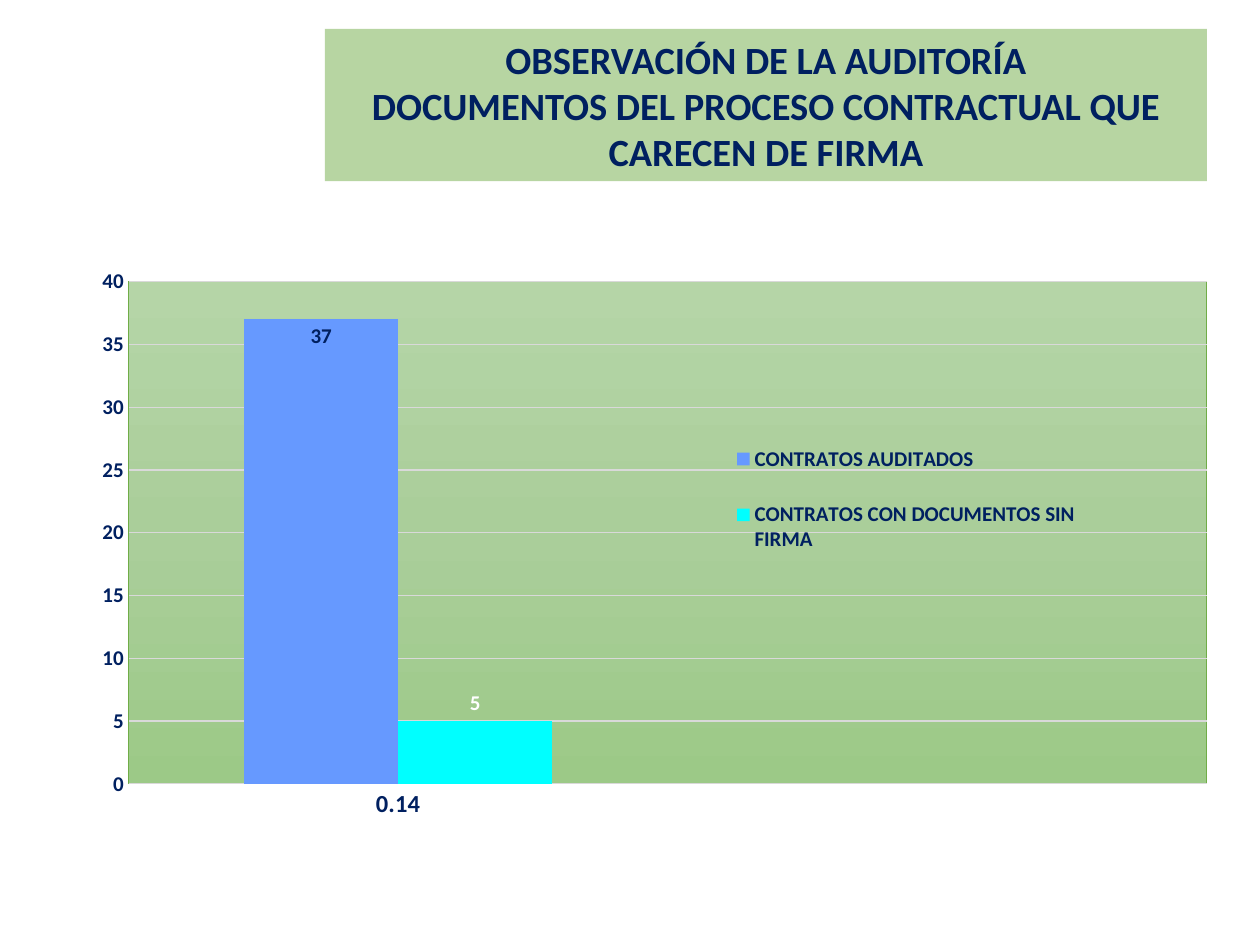
from lxml import etree
from pptx import Presentation
from pptx import util as u
from pptx.chart.data import CategoryChartData
from pptx.dml.color import RGBColor
from pptx.enum import chart as ch, text
from pptx.oxml import parse_xml
from pptx.oxml.ns import nsdecls, qn

COLORS = {"navy": "002060", "green": "70AD47", "grid": "D9D9D9", "white": "FFFFFF",
          "audited": "6699FF", "unsigned": "00FFFF"}
PLOT_STOPS = {0: "B5D5A7", 50: "AACE9A", 100: "9CC987"}
TITLE = ["OBSERVACIÓN DE LA AUDITORÍA",
         "DOCUMENTOS DEL PROCESO CONTRACTUAL QUE CARECEN DE FIRMA"]
SERIES = [
    ("CONTRATOS AUDITADOS", 37, "audited", "navy", ch.XL_LABEL_POSITION.INSIDE_END),
    ("CONTRATOS CON DOCUMENTOS SIN FIRMA", 5, "unsigned", "white",
     ch.XL_LABEL_POSITION.OUTSIDE_END),
]


def rgb(name):
    return RGBColor.from_string(COLORS[name])


def set_attrs(obj, values):
    for key, value in values.items():
        setattr(obj, key, value)


def set_font(font, size, color="navy"):
    set_attrs(font, {"name": "Calibri", "size": u.Pt(size), "bold": True})
    font.color.rgb = rgb(color)


def manual_layout(x, y, w, h, inner=False):
    target = '<c:layoutTarget val="inner"/>' if inner else ""
    sizes = "".join(f'<c:{k} val="{v}"/>' for k, v in zip("xywh", (x, y, w, h)))
    return parse_xml(f'<c:layout {nsdecls("c")}><c:manualLayout>{target}'
                     '<c:xMode val="edge"/><c:yMode val="edge"/>'
                     f'{sizes}</c:manualLayout></c:layout>')


def add_title(s, left, top, width, height):
    sp = s.shapes.title
    set_attrs(sp, {"left": left, "top": top, "width": width, "height": height})
    sp.fill.solid()
    sp.fill.fore_color.rgb = rgb("green")
    clr = next(sp._element.spPr.iter(qn("a:srgbClr")))
    etree.SubElement(clr, qn("a:alpha")).set("val", "50000")
    tf = sp.text_frame
    set_attrs(tf, {"word_wrap": True, "auto_size": text.MSO_AUTO_SIZE.NONE,
                   "vertical_anchor": text.MSO_ANCHOR.MIDDLE})
    tf.text = "\n".join(TITLE)
    for p in tf.paragraphs:
        p.alignment = text.PP_ALIGN.CENTER
        set_font(p.runs[0].font, 22)


def format_plot_area(chart):
    area = chart._chartSpace.chart.plotArea
    for old in area.findall(qn("c:layout")):
        area.remove(old)
    area.insert(0, manual_layout(0.05, 0.04, 0.95, 0.9, inner=True))
    stops = "".join(f'<a:gs pos="{pos * 1000}"><a:srgbClr val="{c}"/></a:gs>'
                    for pos, c in PLOT_STOPS.items())
    area.append(parse_xml(
        f'<c:spPr {nsdecls("c", "a")}><a:gradFill><a:gsLst>{stops}</a:gsLst>'
        '<a:lin ang="5400000" scaled="0"/></a:gradFill><a:ln w="6350"><a:solidFill>'
        f'<a:srgbClr val="{COLORS["green"]}"/></a:solidFill></a:ln></c:spPr>'))


def format_axes(chart):
    for axis, size in ((chart.category_axis, 14), (chart.value_axis, 12)):
        set_attrs(axis, {"major_tick_mark": ch.XL_TICK_MARK.NONE,
                         "minor_tick_mark": ch.XL_TICK_MARK.NONE})
        axis.format.line.fill.background()
        set_font(axis.tick_labels.font, size)
    set_attrs(chart.value_axis, {"minimum_scale": 0, "maximum_scale": 40,
                                 "major_unit": 5, "has_major_gridlines": True})
    line = chart.value_axis.major_gridlines.format.line
    line.color.rgb = rgb("grid")
    line.width = u.Pt(0.75)


def format_legend(chart):
    chart.has_legend = True
    legend = chart.legend
    set_attrs(legend, {"position": ch.XL_LEGEND_POSITION.BOTTOM,
                       "include_in_layout": False})
    set_font(legend.font, 12)
    for old in legend._element.findall(qn("c:layout")):
        legend._element.remove(old)
    legend._element.find(qn("c:legendPos")).addnext(manual_layout(0.56, 0.28, 0.35, 0.3))


def add_contracts_chart(s, left, top, width, height):
    data = CategoryChartData()
    data.categories = ["0.14", ""]
    for name, value, *_ in SERIES:
        data.add_series(name, [value, None])
    chart = s.shapes.add_chart(ch.XL_CHART_TYPE.COLUMN_CLUSTERED,
                               left, top, width, height, data).chart
    chart.has_title = False
    set_attrs(chart.font, {"name": "Calibri", "size": u.Pt(10)})
    plot = chart.plots[0]
    set_attrs(plot, {"gap_width": 150, "overlap": 0, "vary_by_categories": False})
    for series, (_, _, fill, label, position) in zip(plot.series, SERIES):
        series.format.fill.solid()
        series.format.fill.fore_color.rgb = rgb(fill)
        set_attrs(series.data_labels, {"show_value": True, "position": position})
        set_font(series.data_labels.font, 12, label)
    format_axes(chart)
    format_legend(chart)
    format_plot_area(chart)


def main():
    prs = Presentation()
    set_attrs(prs, {"slide_width": u.Cm(25.4), "slide_height": u.Cm(19.05)})
    s = prs.slides.add_slide(prs.slide_layouts[5])
    add_title(s, u.Cm(6.55), u.Cm(0.58), u.Cm(17.78), u.Cm(3.07))
    add_contracts_chart(s, u.Cm(1.45), u.Cm(5.23), u.Cm(22.89), u.Cm(11.28))
    prs.save("out.pptx")


if __name__ == "__main__":
    main()
